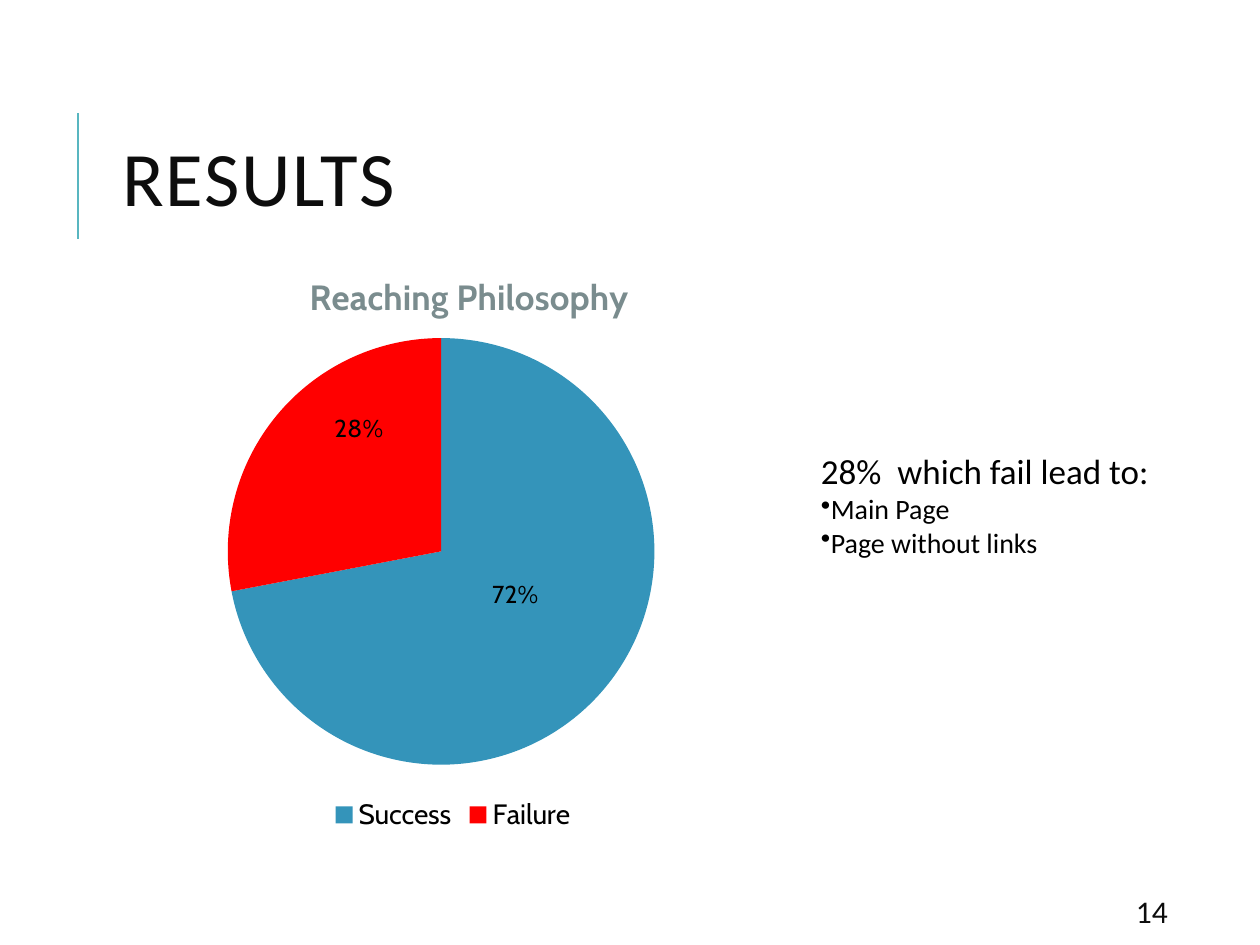
import pptx
import pptx.chart.data
import pptx.dml.color
import pptx.enum.chart
import pptx.enum.shapes
import pptx.enum.text
import pptx.oxml
import pptx.oxml.ns
import pptx.util
from lxml import etree

PX = 914400 / 126  # EMU in one pixel


def color(hex_string):
    return pptx.dml.color.RGBColor.from_string(hex_string)


def add_text(box, lines, anchor, inset):
    """Add a text box holding (text, size, colour) lines and return its frame."""
    frame = slide.shapes.add_textbox(*[round(v * PX) for v in box]).text_frame
    frame.word_wrap = True
    frame.vertical_anchor = anchor
    frame.margin_left = frame.margin_right = round(inset[0] * PX)
    frame.margin_top = frame.margin_bottom = round(inset[1] * PX)
    for i, (text, size, hex_string) in enumerate(lines):
        paragraph = frame.paragraphs[0] if i == 0 else frame.add_paragraph()
        paragraph.text = text
        paragraph.font.name = "Calibri"
        paragraph.font.size = pptx.util.Pt(size)
        paragraph.font.color.rgb = color(hex_string)
    return frame


deck = pptx.Presentation()
deck.slide_width, deck.slide_height = round(1260 * PX), round(945 * PX)
slide = deck.slides.add_slide(deck.slide_layouts[6])
MIDDLE = pptx.enum.text.MSO_ANCHOR.MIDDLE
TOP = pptx.enum.text.MSO_ANCHOR.TOP

# Accent line beside the heading
accent = slide.shapes.add_connector(
    pptx.enum.shapes.MSO_CONNECTOR.STRAIGHT,
    *[round(v * PX) for v in (78, 239, 78, 113)])
accent.line.color.rgb = color("58B6C0")
accent.line.width = pptx.util.Pt(1.5)
etree.SubElement(accent._element.spPr, pptx.oxml.ns.qn("a:effectLst"))

# Heading
heading = add_text((106, 81, 1004, 207), [("RESULTS", 44, "0D0D0D")], MIDDLE, (16, 9))
heading.paragraphs[0].line_spacing = 0.8
heading.paragraphs[0].runs[0].font._element.set("spc", "100")

# Page number
add_text((1120, 892, 101, 38), [("14", 18, "0D0D0D")], MIDDLE, (16, 9))

# Pie chart
outcomes = pptx.chart.data.CategoryChartData()
outcomes.categories = ["Success", "Failure"]
outcomes.add_series("Series 1", (72, 28))
pie = slide.shapes.add_chart(
    pptx.enum.chart.XL_CHART_TYPE.PIE,
    *[round(v * PX) for v in (59, 236, 788, 601)], outcomes).chart
pie.font.name = "Cabin"
pie.font.size = pptx.util.Pt(10)
pie.font.color.rgb = color("000000")

# Chart title and legend
pie.has_title = True
title = pie.chart_title
title.text_frame.text = "Reaching Philosophy"
title_font = title.text_frame.paragraphs[0].runs[0].font
title_font.name = "Cabin"
title_font.size = pptx.util.Pt(20)
title_font.bold = True
title_font.color.rgb = color("7A8C8E")
title.include_in_layout = True
pie.has_legend = True
pie.legend.position = pptx.enum.chart.XL_LEGEND_POSITION.BOTTOM
pie.legend.include_in_layout = False
pie.legend.font.name = "Cabin"
pie.legend.font.size = pptx.util.Pt(16)
pie.legend.font.color.rgb = color("000000")

# Slices and their percentages
plot = pie.plots[0]
plot.vary_by_categories = True
slices = plot.series[0]
for i, (fill, label) in enumerate([("3494BA", "72%"), ("FF0000", "28%")]):
    point = slices.points[i]
    point.format.fill.solid()
    point.format.fill.fore_color.rgb = color(fill)
    point.data_label.text_frame.text = label
    label_font = point.data_label.text_frame.paragraphs[0].runs[0].font
    label_font.name = "Cabin"
    label_font.size = pptx.util.Pt(14)
    label_font.color.rgb = color("000000")
    point.data_label.position = pptx.enum.chart.XL_LABEL_POSITION.CENTER

# Manual places, as fractions of the chart
LAYOUT = ('<c:layout %s><c:manualLayout>%s</c:manualLayout></c:layout>')
labels = slices._element.findall(".//" + pptx.oxml.ns.qn("c:dLbl"))
EDGE = {"xMode": "edge", "yMode": "edge"}
placements = [
    (title._element, "c:tx", {**EDGE, "x": 0.31, "y": 0.05}),
    (labels[0], "c:idx", {"x": -0.01, "y": -0.04}),
    (labels[1], "c:idx", {"x": 0, "y": -0.09}),
    (pie._chartSpace.chart.plotArea, None,
     {"layoutTarget": "inner", **EDGE, "x": 0.08, "y": 0.17, "w": 0.81, "h": 0.71}),
]
for parent, before, values in placements:
    for old in parent.findall(pptx.oxml.ns.qn("c:layout")):
        parent.remove(old)
    settings = "".join(f'<c:{key} val="{value}"/>' for key, value in values.items())
    layout = pptx.oxml.parse_xml(LAYOUT % (pptx.oxml.ns.nsdecls("c"), settings))
    if before:
        parent.find(pptx.oxml.ns.qn(before)).addnext(layout)
    else:
        parent.insert(0, layout)

# Where the failures lead
failures = add_text(
    (808, 444, 394, 161),
    [("28%  which fail lead to:", 20, "000000"),
     ("Main Page", 16, "000000"),
     ("Page without links", 16, "000000")], TOP, (13, 6))
for paragraph in failures.paragraphs[1:]:
    bullet = etree.SubElement(paragraph._p.get_or_add_pPr(), pptx.oxml.ns.qn("a:buChar"))
    bullet.set("char", "•")
    paragraph._p.pPr.insert(0, bullet)  # bullets precede the default run properties

deck.save("out.pptx")
